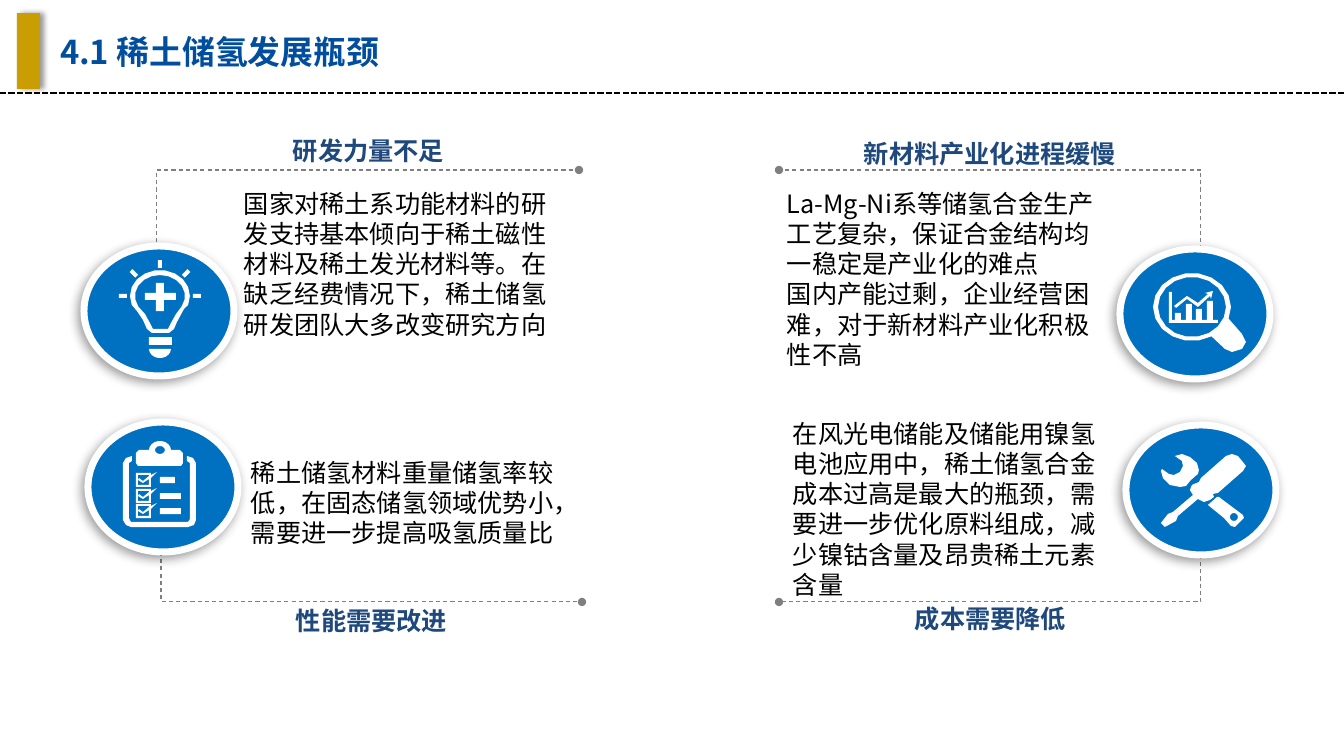
from math import cos, radians, sin

from lxml.etree import SubElement
from pptx import Presentation
from pptx.dml.color import RGBColor
from pptx.enum.dml import MSO_LINE
from pptx.enum.shapes import MSO_CONNECTOR, MSO_SHAPE
from pptx.enum.text import MSO_ANCHOR, MSO_AUTO_SIZE, PP_ALIGN
from pptx.oxml.ns import qn
from pptx.util import Emu, Pt

PX = 914400 / 100.8
FINE = 10
FONT = "Noto Sans CJK SC"
COLORS = {"black": "000000", "white": "FFFFFF", "gold": "CA9E03", "grey": "7F7F7F",
          "disc": "0070C0", "heading": "1F497D", "title": "004E9D"}
TITLE = "4.1 稀土储氢发展瓶颈"
DISC_SIZE = (150, 130)
TOPICS = [
    {"heading": "研发力量不足", "heading_box": (254, 132, 229, 37),
     "body": ["国家对稀土系功能材料的研发支持基本倾向于稀土磁性材料及稀土发光材料等。"
              "在缺乏经费情况下，稀土储氢研发团队大多改变研究方向"],
     "body_box": (237, 185, 337, 159), "disc": (84, 246),
     "leader": [(157, 253), (157, 170), (579, 170)]},
    {"heading": "新材料产业化进程缓慢", "heading_box": (813, 135, 354, 37),
     "body": ["La-Mg-Ni系等储氢合金生产工艺复杂，保证合金结构均一稳定是产业化的难点",
              "国内产能过剩，企业经营困难，对于新材料产业化积极性不高"],
     "body_box": (780, 185, 337, 190), "disc": (1120, 249),
     "leader": [(1201, 253), (1201, 170), (779, 170)]},
    {"heading": "性能需要改进", "heading_box": (257, 602, 229, 37),
     "body": ["稀土储氢材料重量储氢率较低，在固态储氢领域优势小，需要进一步提高吸氢质量比"],
     "body_box": (244, 454, 337, 99), "disc": (88, 422),
     "leader": [(161, 505), (161, 602), (582, 602)]},
    {"heading": "成本需要降低", "heading_box": (876, 600, 229, 37),
     "body": ["在风光电储能及储能用镍氢电池应用中，稀土储氢合金成本过高是最大的瓶颈，"
              "需要进一步优化原料组成，减少镍钴含量及昂贵稀土元素含量"],
     "body_box": (786, 415, 337, 190), "disc": (1126, 425),
     "leader": [(1201, 544), (1201, 602), (779, 602)]},
]


def arc(x, y, radius_x, radius_y, start=0, end=340, step=20):
    return [(x + radius_x * cos(radians(angle)), y + radius_y * sin(radians(angle)))
            for angle in range(start, end + 1, step)]


def box(left, top, width, height):
    return [(left, top), (left + width, top), (left + width, top + height), (left, top + height)]


def ray(angle):
    across, down = cos(radians(angle)), sin(radians(angle))
    x, y = 160 + 37 * across, 296 + 32 * down
    return [(x + a * across - b * down, y + a * down + b * across)
            for a, b in ((-4, -2), (4, -2), (4, 2), (-4, 2))]


def check_row(top, width):
    return [box(136, top - 1, 15, 14), box(138, top + 1, 11, 10),
            [(139, top + 4), (143, top + 7), (149, top + 2), (149, top + 5), (143, top + 9), (138, top + 6)],
            [(151, top + 1), (157, top - 2), (151, top + 4)],
            box(160, top + 3, width, 6)]


BULB = [
    arc(160, 296, 30, 26, 160, 380) + [(184, 309), (177, 322), (174, 329), (169, 333),
                                       (152, 333), (147, 329), (143, 320), (137, 311)],
    arc(160, 296, 25, 21, 150, 390) + [(176, 314), (171, 323), (168, 329),
                                       (153, 329), (150, 323), (145, 314)],
    [(156, 283), (164, 283), (164, 293), (176, 293), (176, 300), (164, 300),
     (164, 311), (156, 311), (156, 300), (145, 300), (145, 293), (156, 293)],
    box(149, 337, 23, 8), arc(160, 349, 11, 9, 0, 180),
    *[ray(angle) for angle in (180, 225, 270, 315, 0)],
]
MAGNIFIER = [
    arc(1192, 307, 39, 34, 60, 380) + [(1242, 334), (1246, 342), (1242, 349),
                                       (1232, 352), (1225, 349)],
    arc(1192, 307, 34, 30),
    [(1169, 292), (1172, 292), (1172, 320), (1218, 320), (1218, 323), (1169, 323)],
    *[box(left, top, 6, 320 - top) for left, top in ((1175, 313), (1186, 304), (1196, 309), (1207, 301))],
    [(1174, 306), (1187, 296), (1198, 303), (1208, 294), (1205, 293), (1213, 291),
     (1211, 299), (1210, 296), (1198, 307), (1187, 299), (1176, 308)],
]
CLIPBOARD = [
    [(132, 456), (126, 458), (123, 463), (123, 520), (126, 525), (131, 527), (188, 527),
     (194, 525), (196, 520), (196, 463), (193, 458), (187, 456), (187, 461), (190, 463),
     (190, 519), (188, 522), (131, 522), (129, 518), (129, 463), (132, 461)],
    [(136, 453), (139, 450)] + arc(160, 450, 11, 9, 180, 360)
    + [(180, 450), (183, 453), (183, 463), (181, 466), (138, 466), (136, 463)],
    arc(160, 450, 5, 4, 0, 330, 30),
    *check_row(474, 15), *check_row(490, 21), *check_row(505, 21),
]
TOOLS = [
    [(1191, 480), (1198, 474), (1199, 470), (1197, 463), (1190, 457), (1182, 454),
     (1175, 456), (1182, 461), (1183, 466), (1180, 472), (1174, 475), (1169, 474),
     (1162, 469), (1161, 471), (1163, 478), (1170, 485), (1180, 487), (1186, 486)],
    [(1217, 497), (1208, 505), (1224, 518), (1231, 526), (1235, 527),
     (1244, 518), (1243, 515), (1235, 509), (1219, 497)],
    arc(1234, 517, 4, 4, 0, 330, 30),
    [(1243, 462), (1238, 456), (1232, 454), (1226, 456), (1201, 478), (1199, 482),
     (1192, 485), (1190, 490), (1193, 495), (1173, 512), (1168, 514), (1161, 523),
     (1165, 527), (1176, 521), (1178, 516), (1198, 499), (1204, 502), (1210, 500),
     (1214, 497), (1213, 494), (1218, 493), (1243, 471), (1246, 466)],
]

presentation = Presentation()
presentation.slide_width, presentation.slide_height = Emu(12192000), Emu(6858000)
slide = presentation.slides.add_slide(presentation.slide_layouts[5])
shapes = slide.shapes


def px(value):
    return Emu(round(value * PX))


def color(name):
    return RGBColor.from_string(COLORS[name])


def style(shape, fill=None, line=None, width=0):
    shape.shadow.inherit = False
    if fill:
        shape.fill.solid()
        shape.fill.fore_color.rgb = color(fill)
    else:
        shape.fill.background()
    if line:
        shape.line.color.rgb = color(line)
        shape.line.width = Pt(width)
    else:
        shape.line.fill.background()
    return shape


def draw(kind, bounds, **look):
    return style(shapes.add_shape(kind, *map(px, bounds)), **look)


def outline(contours, close=True, **look):
    fine = [[(x * FINE, y * FINE) for x, y in contour] for contour in contours]
    builder = shapes.build_freeform(*fine[0][0], scale=PX / FINE)
    builder.add_line_segments(fine[0][1:], close=close)
    for contour in fine[1:]:
        builder.move_to(*contour[0])
        builder.add_line_segments(contour[1:], close=close)
    return style(builder.convert_to_shape(), **look)


def add_shadow(shape, blur, distance, direction):
    effects = shape._element.spPr.find(qn("a:effectLst"))
    shadow = SubElement(effects, qn("a:outerShdw"), blurRad=str(Pt(blur)), dist=str(Pt(distance)),
                        dir=str(direction * 60000), algn="ctr", rotWithShape="0")
    tint = SubElement(shadow, qn("a:srgbClr"), val=COLORS["black"])
    SubElement(tint, qn("a:alpha"), val="40000")


def write(shape, paragraphs, size=18, ink="black", bold=False, align=PP_ALIGN.LEFT,
          anchor=MSO_ANCHOR.TOP, margins=(7, 3), fit=MSO_AUTO_SIZE.SHAPE_TO_FIT_TEXT):
    frame = shape.text_frame
    frame.word_wrap = True
    frame.auto_size = fit
    frame.vertical_anchor = anchor
    frame.margin_left = frame.margin_right = px(margins[0])
    frame.margin_top = frame.margin_bottom = px(margins[1])
    frame.text = "\n".join(paragraphs)
    for paragraph in frame.paragraphs:
        paragraph.alignment = align
        for run in paragraph.runs:
            run.font.name, run.font.size, run.font.bold = FONT, Pt(size), bold
            run.font.color.rgb = color(ink)
            SubElement(run._r.get_or_add_rPr(), qn("a:ea"), typeface=FONT)


def text_box(bounds, paragraphs, **text_format):
    write(shapes.add_textbox(*map(px, bounds)), paragraphs, **text_format)


def draw_leader(points):
    leader = outline([points], close=False, line="grey")
    leader.line.dash_style = MSO_LINE.DASH
    for end in ("a:headEnd", "a:tailEnd"):
        SubElement(leader.line._get_or_add_ln(), qn(end), type="oval")


rule = shapes.add_connector(MSO_CONNECTOR.STRAIGHT, 0, px(93), px(1344), px(93))
rule.line.color.rgb, rule.line.width = color("black"), Pt(1.5)
rule.line.dash_style = MSO_LINE.SQUARE_DOT
SubElement(rule._element.spPr, qn("a:effectLst"))
add_shadow(draw(MSO_SHAPE.RECTANGLE, (17, 13, 23, 76), fill="gold"), 4, 3, 0)

title = shapes.title
title.left, title.top, title.width, title.height = map(px, (50, 23, 547, 57))
write(title, [TITLE], size=23.4, ink="title", bold=True, anchor=MSO_ANCHOR.MIDDLE,
      margins=(10, 5), fit=MSO_AUTO_SIZE.NONE)

for topic in TOPICS:
    draw_leader(topic["leader"])
for topic, icon in zip(TOPICS, (BULB, MAGNIFIER, CLIPBOARD, TOOLS)):
    disc = draw(MSO_SHAPE.OVAL, (*topic["disc"], *DISC_SIZE), fill="disc", line="white", width=5)
    add_shadow(disc, 8, 3, 135)
    outline(icon, fill="white")
for topic in TOPICS:
    text_box(topic["heading_box"], [topic["heading"]], ink="heading", bold=True, align=PP_ALIGN.CENTER)
    text_box(topic["body_box"], topic["body"])

presentation.save("out.pptx")
